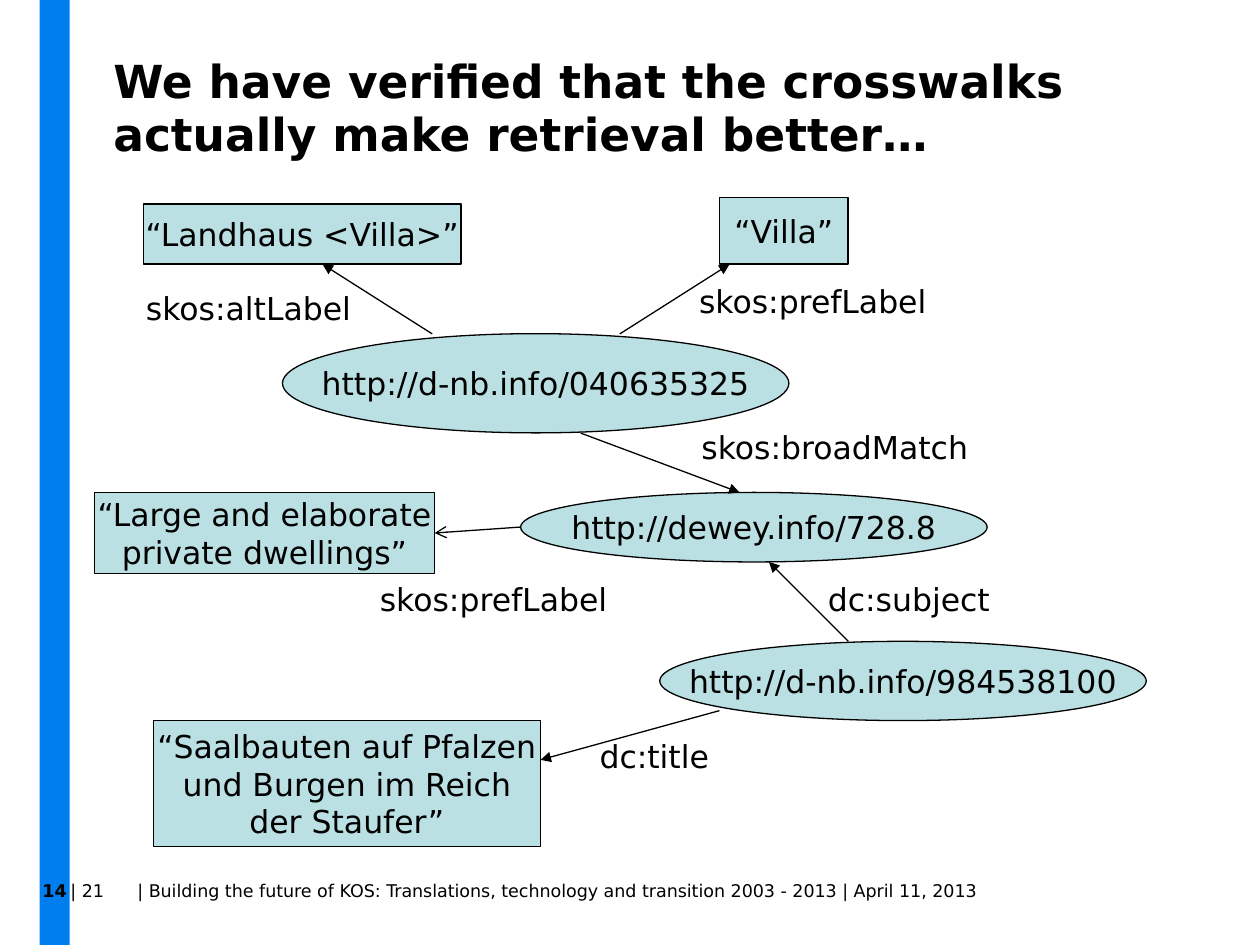
import pptx
import pptx.util
import pptx.dml.color
import pptx.enum.shapes
import pptx.enum.text
import pptx.oxml.ns
import lxml.etree

Pt = pptx.util.Pt
MSO_SHAPE = pptx.enum.shapes.MSO_SHAPE
PP_ALIGN = pptx.enum.text.PP_ALIGN
MSO_ANCHOR = pptx.enum.text.MSO_ANCHOR
qn = pptx.oxml.ns.qn


def color(value):
    return pptx.dml.color.RGBColor.from_string(value)


def write(shape, lines, size, bold=False, align=PP_ALIGN.LEFT, anchor=MSO_ANCHOR.TOP,
          wrap=False, insets=(7.2, 3.6, 7.2, 3.6)):
    frame = shape.text_frame
    frame.word_wrap = wrap
    frame.vertical_anchor = anchor
    frame.margin_left, frame.margin_top, frame.margin_right, frame.margin_bottom = map(Pt, insets)
    for index, line in enumerate(lines):
        paragraph = frame.add_paragraph() if index else frame.paragraphs[0]
        paragraph.alignment = align
        run = paragraph.add_run()
        run.text = line
        run.font.name = "DejaVu Sans"
        run.font.size = Pt(size)
        run.font.bold = bold
        run.font.color.rgb = color("000000")
    return frame.paragraphs[0]


presentation = pptx.Presentation()
presentation.slide_width = Pt(720)
presentation.slide_height = Pt(540)
slide = presentation.slides.add_slide(presentation.slide_layouts[6])

title = slide.shapes.add_textbox(Pt(64.8), Pt(31.7), Pt(597.6), Pt(61.2))
paragraph = write(title, ["We have verified that the crosswalks actually make retrieval better…"],
                  26, bold=True, wrap=True, insets=(0, 0, 0, 0))
paragraph.line_spacing = Pt(30)

footer = slide.shapes.add_textbox(Pt(40.3), Pt(502.6), Pt(620), Pt(12.2))
paragraph = write(footer, ["| 21\t| Building the future of KOS: Translations, technology and transition "
                           "2003 - 2013 | April 11, 2013"], 10, wrap=True, insets=(0, 0, 0, 0))
tabs = lxml.etree.SubElement(paragraph._p.get_or_add_pPr(), qn("a:tabLst"))
lxml.etree.SubElement(tabs, qn("a:tab"), pos=str(Pt(38.2)), algn="l")

sidebar = slide.shapes.add_shape(MSO_SHAPE.RECTANGLE, Pt(22.6), Pt(0), Pt(17.2), Pt(540))
sidebar.shadow.inherit = False
sidebar.fill.solid()
sidebar.fill.fore_color.rgb = color("007EEF")
sidebar.line.fill.background()
write(sidebar, ["14"], 10, bold=True, align=PP_ALIGN.CENTER, anchor=MSO_ANCHOR.BOTTOM,
      insets=(0, 3.6, 0, 25.2))

nodes = [
    (MSO_SHAPE.RECTANGLE, 82, 116.6, 181.4, 34.2, ["“Landhaus <Villa>”"]),
    (MSO_SHAPE.RECTANGLE, 411.1, 112.8, 73.6, 38, ["“Villa”"]),
    (MSO_SHAPE.RECTANGLE, 54, 281.5, 194.4, 46.4, ["“Large and elaborate", "private dwellings”"]),
    (MSO_SHAPE.RECTANGLE, 87.8, 411.8, 221, 72,
     ["“Saalbauten auf Pfalzen", "und Burgen im Reich", "der Staufer”"]),
    (MSO_SHAPE.OVAL, 161.4, 190.7, 289.4, 56.7, ["http://d-nb.info/040635325"]),
    (MSO_SHAPE.OVAL, 297.5, 281.4, 266.6, 39.7, ["http://dewey.info/728.8"]),
    (MSO_SHAPE.OVAL, 377, 366.5, 278, 45.3, ["http://d-nb.info/984538100"]),
]
for kind, left, top, width, height, lines in nodes:
    node = slide.shapes.add_shape(kind, Pt(left), Pt(top), Pt(width), Pt(height))
    node.shadow.inherit = False
    node.fill.solid()
    node.fill.fore_color.rgb = color("BBE0E3")
    node.line.color.rgb = color("000000")
    node.line.width = Pt(0.75)
    write(node, lines, 18, align=PP_ALIGN.CENTER, anchor=MSO_ANCHOR.MIDDLE)

arrows = [
    (247, 190.8, 184.3, 151, "triangle"),
    (354.2, 190.8, 416.9, 151, "triangle"),
    (331.9, 247.5, 422.6, 281.4, "triangle"),
    (297.4, 301.2, 248.4, 304.6, "arrow"),
    (484.8, 366.5, 439.4, 321.1, "triangle"),
    (411.1, 406.1, 308.9, 434.2, "triangle"),
]
for start_x, start_y, end_x, end_y, head in arrows:
    arrow = slide.shapes.add_connector(pptx.enum.shapes.MSO_CONNECTOR.STRAIGHT,
                                       Pt(start_x), Pt(start_y), Pt(end_x), Pt(end_y))
    arrow.line.color.rgb = color("000000")
    arrow.line.width = Pt(0.75)
    lxml.etree.SubElement(arrow.line._get_or_add_ln(), qn("a:tailEnd"), type=head)
    lxml.etree.SubElement(arrow._element.spPr, qn("a:effectLst"))

labels = [
    ("skos:altLabel", 76.3, 161.7, 133.2),
    ("skos:prefLabel", 392.4, 157.9, 146.9),
    ("skos:broadMatch", 393.8, 241.3, 168.5),
    ("skos:prefLabel", 210, 328, 146.9),
    ("dc:subject", 466, 328, 108.7),
    ("dc:title", 335.5, 417.8, 78.5),
]
for text, left, top, width in labels:
    label = slide.shapes.add_textbox(Pt(left), Pt(top), Pt(width), Pt(28.8))
    write(label, [text], 18)

presentation.save("out.pptx")
